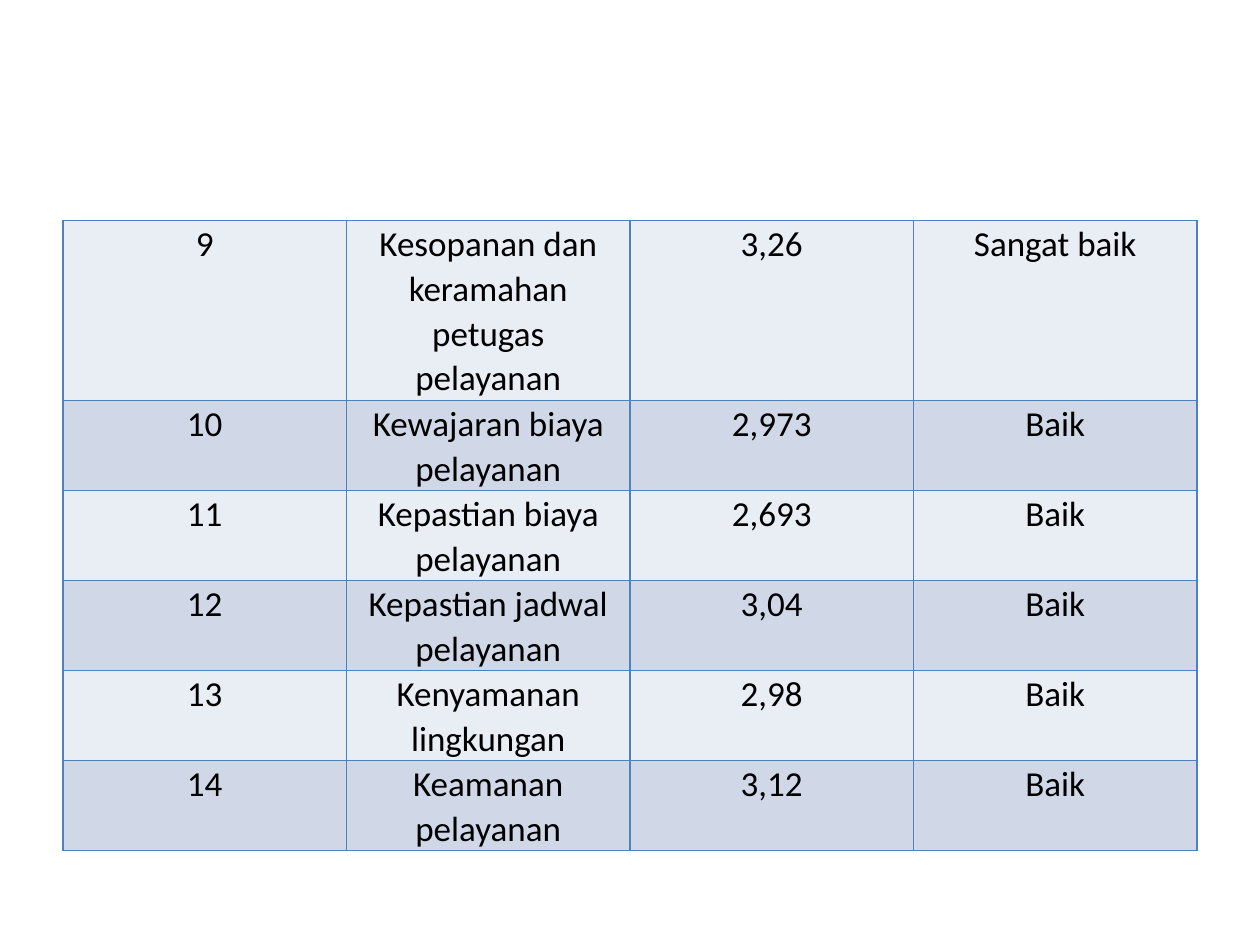
import pptx
import pptx.dml.color
import pptx.enum.text
import pptx.oxml
import pptx.oxml.ns
import pptx.util

Inches = pptx.util.Inches
Pt = pptx.util.Pt

SERVICE_RATINGS = [
    ("9", "Kesopanan dan keramahan petugas pelayanan", "3,26", "Sangat baik"),
    ("10", "Kewajaran biaya pelayanan", "2,973", "Baik"),
    ("11", "Kepastian biaya pelayanan", "2,693", "Baik"),
    ("12", "Kepastian jadwal pelayanan", "3,04", "Baik"),
    ("13", "Kenyamanan lingkungan", "2,98", "Baik"),
    ("14", "Keamanan pelayanan", "3,12", "Baik"),
]
BAND_FILLS = ("E9EDF4", "D0D8E8")
BORDER_COLOR = "4F81BD"
TABLE_BOX = (0.5, 1.75, 9, 4.9)
MINIMUM_ROW_HEIGHT = 0.41

CELL_FORMAT = {
    "margin_left": Inches(0.07),
    "margin_right": Inches(0.07),
    "margin_top": 0,
    "margin_bottom": 0,
}
PARAGRAPH_FORMAT = {
    "alignment": pptx.enum.text.PP_ALIGN.CENTER,
    "line_spacing": 1.05,
}
FONT_FORMAT = {"name": "Calibri", "size": Pt(20), "bold": False}


def rgb(value):
    return pptx.dml.color.RGBColor.from_string(value)


def apply_format(target, values):
    for name, value in values.items():
        setattr(target, name, value)


def add_borders(cell):
    properties = cell._tc.get_or_add_tcPr()
    for side in "LRTB":
        properties.append(pptx.oxml.parse_xml(
            f'<a:ln{side} {pptx.oxml.ns.nsdecls("a")} w="{Pt(1)}">'
            f'<a:solidFill><a:srgbClr val="{BORDER_COLOR}"/></a:solidFill>'
            f'</a:ln{side}>'
        ))


def fill_cell(cell, text, band_fill):
    apply_format(cell, CELL_FORMAT)
    add_borders(cell)
    cell.fill.solid()
    cell.fill.fore_color.rgb = rgb(band_fill)
    paragraph = cell.text_frame.paragraphs[0]
    apply_format(paragraph, PARAGRAPH_FORMAT)
    run = paragraph.add_run()
    run.text = text
    apply_format(run.font, FONT_FORMAT)
    run.font.color.rgb = rgb("000000")


def add_ratings_table(slide):
    left, top, width, height = map(Inches, TABLE_BOX)
    frame = slide.shapes.add_table(
        len(SERVICE_RATINGS), len(SERVICE_RATINGS[0]), left, top, width, height
    )
    table = frame.table
    table.first_row = False
    for row_index, (row, texts) in enumerate(zip(table.rows, SERVICE_RATINGS)):
        row.height = Inches(MINIMUM_ROW_HEIGHT)
        band_fill = BAND_FILLS[row_index % len(BAND_FILLS)]
        for cell, text in zip(row.cells, texts):
            fill_cell(cell, text, band_fill)
    frame.height = height


def main():
    presentation = pptx.Presentation()
    presentation.slide_width = Inches(10)
    presentation.slide_height = Inches(7.5)
    slide = presentation.slides.add_slide(presentation.slide_layouts[6])
    add_ratings_table(slide)
    presentation.save("out.pptx")


if __name__ == "__main__":
    main()
